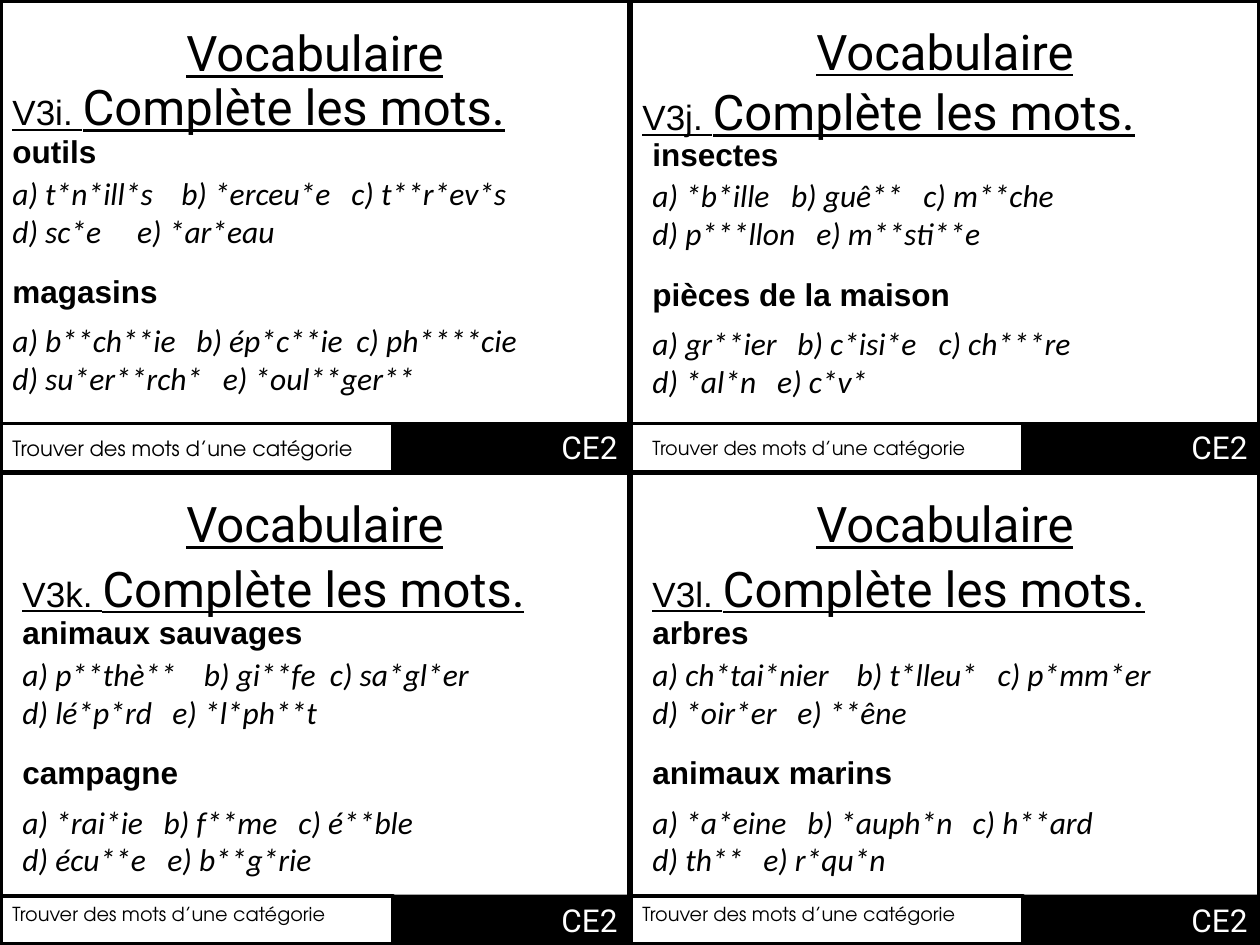
"""Build a sheet of four vocabulary cards."""
from lxml.etree import SubElement
from pptx import Presentation
from pptx.dml.color import RGBColor
from pptx.enum.shapes import MSO_SHAPE
from pptx.enum.text import MSO_ANCHOR, MSO_AUTO_SIZE, PP_ALIGN
from pptx.oxml.ns import qn
from pptx.util import Inches, Pt

BLACK = RGBColor(0, 0, 0)
WHITE = RGBColor(255, 255, 255)
WIDE, HIGH = 5, 3.75
BAR = 3.12
TITLE = "Vocabulaire"
TASK = "Complète les mots."
GOAL = "Trouver des mots d’une catégorie"
LEVEL = "CE2"

CARDS = [
    {"code": "V3i. ", "title": 0.13, "task": (0, 0.56), "body": (0, 1), "foot": (0, 3.41, 12),
     "sets": [
         ("outils", 1.25, [("a) t*n*ill*s", "b) *erceu*e", "c) t**r*ev*s"),
                           ("d) sc*e", "e) *ar*eau")], [(1.34, 2.69), (0.99,)]),
         ("magasins", 2.03, [("a) b**ch**ie", "b) ép*c**ie", "c) ph****cie"),
                             ("d) su*er**rch*", "e) *oul**ger**")], [(1.46, 2.73), (1.67,)])]},
    {"code": "V3j. ", "title": 0.12, "task": (0, 0.6), "body": (0.08, 1.02), "foot": (0.08, 3.41, 11),
     "sets": [
         ("insectes", 1.25, [("a) *b*ille", "b) guê**", "c) m**che"),
                             ("d) p***llon", "e) m**sti**e")], [(1.1, 2.15), (1.3,)]),
         ("pièces de la maison", 2.66, [("a) gr**ier", "b) c*isi*e", "c) ch***re"),
                                        ("d) *al*n", "e) c*v*")], [(1.15, 2.27), (0.99,)])]},
    {"code": "V3k. ", "title": 0.12, "task": (0.08, 0.63), "body": (0.08, 1.07), "foot": (0, 3.36, 11),
     "sets": [
         ("animaux sauvages", 3.75, [("a) p**thè**", "b) gi**fe", "c) sa*gl*er"),
                                     ("d) lé*p*rd", "e) *l*ph**t")], [(1.44, 2.44), (1.19,)]),
         ("campagne", 2.97, [("a) *rai*ie", "b) f**me", "c) é**ble"),
                             ("d) écu**e", "e) b**g*rie")], [(1.12, 2.19), (1.15,)])]},
    {"code": "V3l. ", "title": 0.12, "task": (0.08, 0.63), "body": (0.08, 1.07), "foot": (0, 3.36, 11),
     "sets": [
         ("arbres", 1.25, [("a) ch*tai*nier", "b) t*lleu*", "c) p*mm*er"),
                           ("d) *oir*er", "e) **êne")], [(1.62, 2.74), (1.15,)]),
         ("animaux marins", 4.45, [("a) *a*eine", "b) *auph*n", "c) h**ard"),
                                   ("d) th**", "e) r*qu*n")], [(1.23, 2.54), (0.88,)])]},
]


def style(run, face, size, color=BLACK, **marks):
    font = run.font
    font.name, font.size = face, Pt(size)
    font.color.rgb = color
    font.bold = marks.get("bold")
    font.italic = marks.get("italic")
    font.underline = marks.get("under")


def add_rect(slide, x, y, w, h, fill=None, line=0):
    rect = slide.shapes.add_shape(MSO_SHAPE.RECTANGLE, Inches(x), Inches(y), Inches(w), Inches(h))
    rect.shadow.inherit = False
    if fill is None:
        rect.fill.background()
    else:
        rect.fill.solid()
        rect.fill.fore_color.rgb = fill
    if line:
        rect.line.color.rgb = BLACK
        rect.line.width = Pt(line)
    else:
        rect.line.fill.background()
    return rect


def add_text(slide, x, y, w, h, text, face, size, align=PP_ALIGN.LEFT, **marks):
    box = slide.shapes.add_textbox(Inches(x), Inches(y), Inches(w), Inches(h))
    frame = box.text_frame
    frame.text = text
    frame.word_wrap = True
    frame.auto_size = MSO_AUTO_SIZE.SHAPE_TO_FIT_TEXT
    for para in frame.paragraphs:
        para.alignment = align
        for run in para.runs:
            style(run, face, size, **marks)
    return frame


def set_tabs(para, stops):
    tabs = SubElement(para._p.get_or_add_pPr(), qn("a:tabLst"))
    for stop in stops:
        SubElement(tabs, qn("a:tab"), pos=str(Inches(stop)), algn="l")


def add_foot(slide, x, y, foot):
    level = add_rect(slide, x + BAR, y + 3.35, WIDE - BAR, 0.4, BLACK)
    frame = level.text_frame
    frame.text = LEVEL
    frame.vertical_anchor = MSO_ANCHOR.TOP
    para = frame.paragraphs[0]
    para.alignment = PP_ALIGN.RIGHT
    style(para.runs[0], "Roboto", 18, WHITE)
    add_rect(slide, x, y + 3.36, BAR, 0.39, line=2)
    left, top, size = foot
    add_text(slide, x + left, y + top, BAR, 0.3, GOAL, "TeX Gyre Adventor", size)


def add_card(slide, x, y, card):
    add_text(slide, x, y + card["title"], WIDE, 0.57, TITLE, "Roboto", 28, PP_ALIGN.CENTER, under=True)
    left, top = card["task"]
    frame = add_text(slide, x + left, y + top, 4.92, 0.57, card["code"], "Arial", 20, under=True)
    run = frame.paragraphs[0].add_run()
    run.text = TASK
    style(run, "Roboto", 28, under=True)
    add_foot(slide, x, y, card["foot"])
    left, top = x + card["body"][0], y + card["body"][1]
    for row, (name, width, lines, stops) in enumerate(card["sets"]):
        head = top + 1.11 * row
        add_text(slide, left, head, width, 0.4, name, "Arial", 18, bold=True)
        text = "\n".join("\t".join(line) for line in lines)
        words = add_text(slide, left, head + (0.33, 0.39)[row], 4.38, 0.71, text, "Calibri", 18, italic=True)
        for para, tabs in zip(words.paragraphs, stops):
            set_tabs(para, tabs)


def main():
    deck = Presentation()
    deck.slide_width, deck.slide_height = Inches(2 * WIDE), Inches(2 * HIGH)
    slide = deck.slides.add_slide(deck.slide_layouts[6])
    spots = [(col * WIDE, row * HIGH) for row in range(2) for col in range(2)]
    for x, y in spots:
        add_rect(slide, x, y, WIDE, HIGH, WHITE, 3)
    for (x, y), card in zip(spots, CARDS):
        add_card(slide, x, y, card)
    deck.save("out.pptx")


if __name__ == "__main__":
    main()
